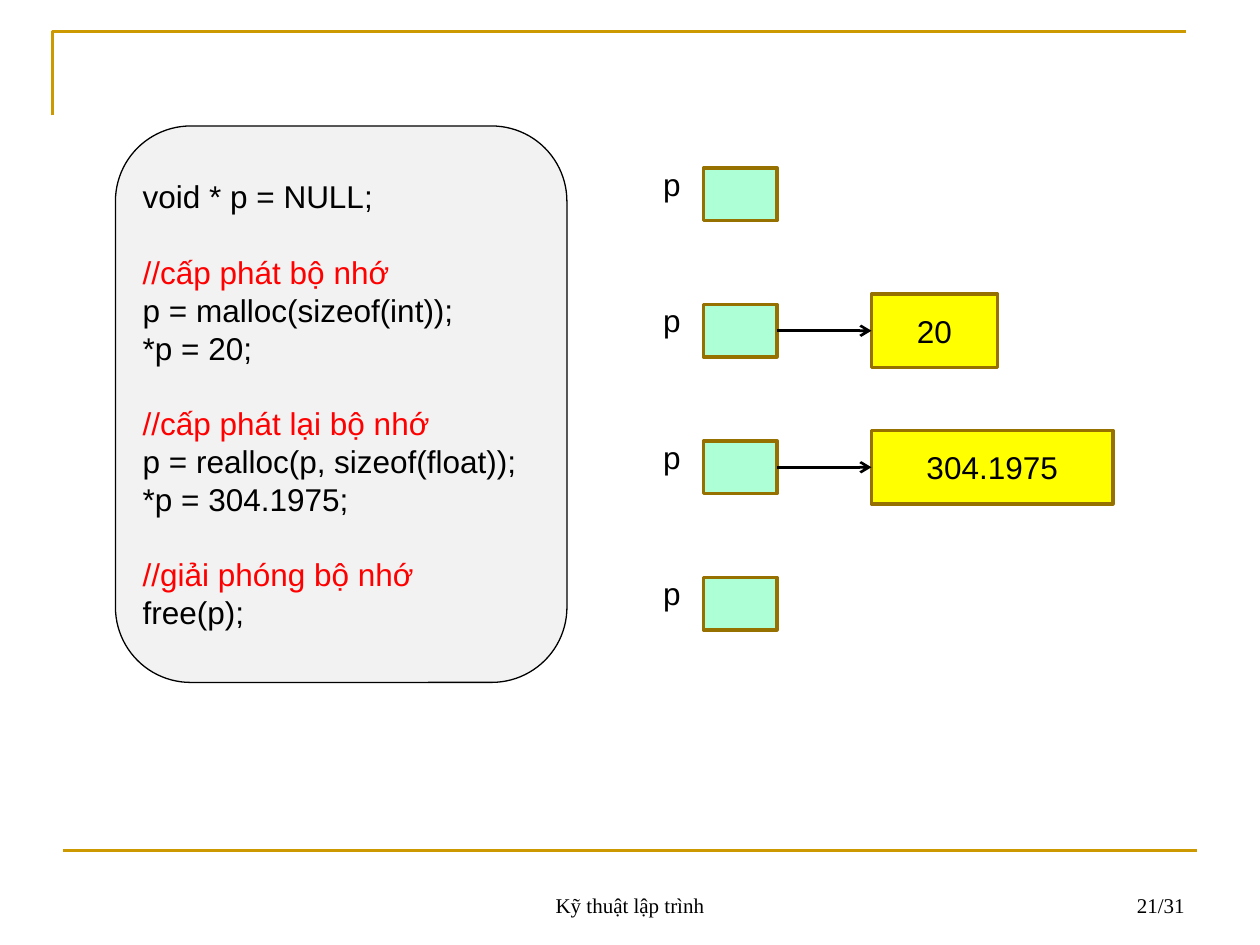
from lxml.etree import SubElement
from pptx import Presentation
from pptx.dml.color import RGBColor
from pptx.enum.shapes import MSO_CONNECTOR as Connector, MSO_SHAPE as Shape
from pptx.enum.text import MSO_ANCHOR as Anchor, PP_ALIGN as Align
from pptx.oxml.ns import qn
from pptx.util import Pt


class Theme:
    black = RGBColor(0x00, 0x00, 0x00)
    comment = RGBColor(0xFF, 0x00, 0x00)
    rule = RGBColor(0xCC, 0x99, 0x00)
    panel = RGBColor(0xF2, 0xF2, 0xF2)
    pointer = RGBColor(0xAD, 0xFF, 0xD6)
    value = RGBColor(0xFF, 0xFF, 0x00)
    border = RGBColor(0x97, 0x71, 0x00)
    body_size = 18
    footer_size = 12
    line_height = 21.6


def write(shape, text, *, size=Theme.body_size, font="Arial", color=Theme.black,
          align=Align.LEFT, anchor=Anchor.TOP, new=True, gap=0, leading=None):
    """Put one paragraph in the shape; new=False adds it after those there."""
    frame = shape.text_frame
    frame.word_wrap = True
    frame.vertical_anchor = anchor
    para = frame.paragraphs[0] if new else frame.add_paragraph()
    para.alignment = align
    para.space_before = Pt(gap)
    if leading:
        para.line_spacing = Pt(leading)
    span = para.add_run()
    span.text = text
    span.font.size = Pt(size)
    span.font.name = font
    span.font.color.rgb = color


def style(shape, line, width, fill=None):
    """Set line and fill, and take the shadow away."""
    shape.line.color.rgb = line
    shape.line.width = Pt(width)
    if hasattr(shape, "shadow"):
        shape.shadow.inherit = False
    else:
        SubElement(shape.line._get_or_add_ln().getparent(), qn("a:effectLst"))
    if fill is not None:
        shape.fill.solid()
        shape.fill.fore_color.rgb = fill


deck = Presentation()
deck.slide_width, deck.slide_height = Pt(720), Pt(540)
page = deck.slides.add_slide(deck.slide_layouts[6])
shapes = page.shapes

# Frame rules
builder = shapes.build_freeform(Pt(30), Pt(66))
builder.add_line_segments([(Pt(30), Pt(18)), (Pt(678), Pt(18))], close=False)
corner = builder.convert_to_shape()
style(corner, Theme.rule, 1.5)
corner.fill.background()
bottom_rule = shapes.add_connector(Connector.STRAIGHT, Pt(36), Pt(486), Pt(684), Pt(486))
style(bottom_rule, Theme.rule, 1.5)

# Footer
for text, left, width, align in [
    ("Kỹ thuật lập trình", 246, 228, Align.CENTER),
    ("21/31", 516, 168, Align.RIGHT),
]:
    box = shapes.add_textbox(Pt(left), Pt(492), Pt(width), Pt(36))
    write(box, text, size=Theme.footer_size, font="Times New Roman",
          align=align, anchor=Anchor.BOTTOM)

# Code panel: each block after the first opens with a comment
code = [
    "void * p = NULL;",
    "//cấp phát bộ nhớ",
    "p = malloc(sizeof(int));",
    "*p = 20;",
    "//cấp phát lại bộ nhớ",
    "p = realloc(p, sizeof(float));",
    "*p = 304.1975;",
    "//giải phóng bộ nhớ",
    "free(p);",
]
panel = shapes.add_shape(Shape.ROUNDED_RECTANGLE, Pt(66), Pt(72), Pt(258), Pt(318))
style(panel, Theme.black, 0.75, Theme.panel)
panel.text_frame.margin_left = panel.text_frame.margin_right = Pt(3)
for index, line in enumerate(code):
    is_comment = line.startswith("//")
    write(panel, line, color=Theme.comment if is_comment else Theme.black,
          anchor=Anchor.MIDDLE, new=index == 0, leading=Theme.line_height,
          gap=Theme.line_height if is_comment else 0)

# Memory states: pointer cell, and the value it points to
states = [None, ("20", 72), ("304.1975", 138), None]
for row, target in enumerate(states):
    top = 96 + 78 * row
    label = shapes.add_textbox(Pt(348), Pt(top - 5.5), Pt(48), Pt(29))
    write(label, "p", align=Align.RIGHT)
    cell = shapes.add_shape(Shape.RECTANGLE, Pt(402), Pt(top), Pt(42), Pt(30))
    style(cell, Theme.border, 2, Theme.pointer)
    if target:
        text, width = target
        value = shapes.add_shape(Shape.RECTANGLE, Pt(498), Pt(top - 6), Pt(width), Pt(42))
        style(value, Theme.border, 2, Theme.value)
        write(value, text, align=Align.CENTER, anchor=Anchor.MIDDLE)
        arrow = shapes.add_connector(
            Connector.STRAIGHT, Pt(444), Pt(top + 15), Pt(498), Pt(top + 15))
        style(arrow, Theme.black, 1.5)
        SubElement(arrow.line._get_or_add_ln(), qn("a:tailEnd"), type="arrow")

deck.save("out.pptx")
